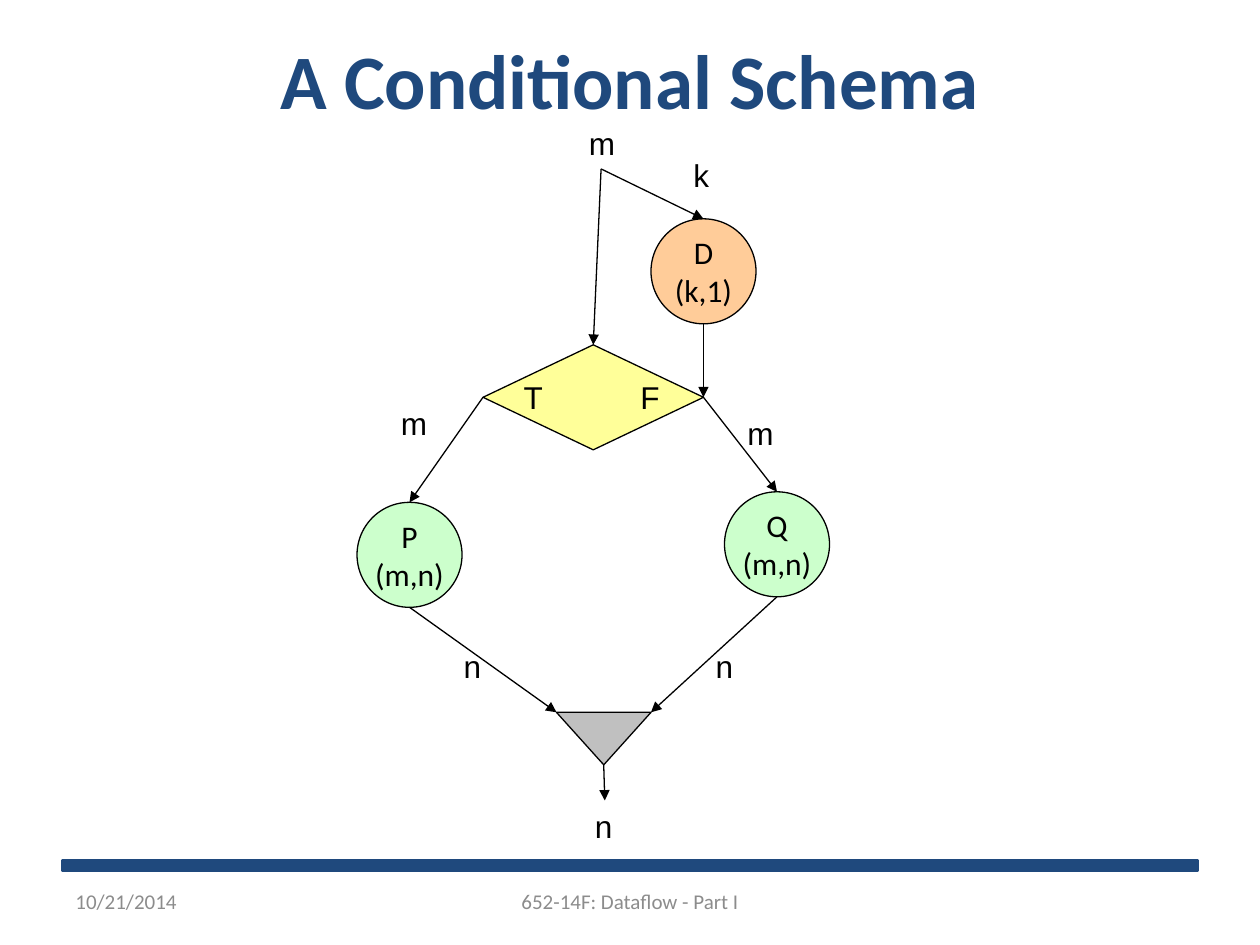
import pptx
import pptx.util
import pptx.dml.color
import pptx.enum.shapes
import pptx.enum.text
import pptx.oxml

Inches, Pt = pptx.util.Inches, pptx.util.Pt
SHAPE = pptx.enum.shapes.MSO_SHAPE
ALIGN = pptx.enum.text.PP_ALIGN

COLORS = {"navy": "1F497D", "black": "000000", "footer": "8C8C8C", "orange": "FFCC99",
          "yellow": "FFFF99", "green": "CCFFCC", "gray": "C0C0C0"}
RGB = {name: pptx.dml.color.RGBColor.from_string(value) for name, value in COLORS.items()}

# Diagram grid: twelve cells to the inch, rows start slightly below the top edge
COL = [Inches(n / 12) for n in range(121)]
ROW = [Inches(0.07 + n / 12) for n in range(90)]
CELL = Inches(1 / 12)


def write(frame, text, size=18, font="Calibri", color="black", bold=False,
          align=ALIGN.CENTER, wrap=False):
    frame.text = text
    frame.word_wrap = wrap
    frame.vertical_anchor = pptx.enum.text.MSO_ANCHOR.MIDDLE
    for paragraph in frame.paragraphs:
        paragraph.alignment = align
        paragraph.font.size = Pt(size)
        paragraph.font.name = font
        paragraph.font.bold = bold
        paragraph.font.color.rgb = RGB[color]


def add_block(kind, left, top, width, height, fill, line="black", weight=0.75):
    block = slide.shapes.add_shape(kind, left, top, width, height)
    block.shadow.inherit = False
    block.fill.solid()
    block.fill.fore_color.rgb = RGB[fill]
    block.line.color.rgb = RGB[line]
    block.line.width = Pt(weight)
    return block


deck = pptx.Presentation()
deck.slide_width, deck.slide_height = Inches(10), Inches(7.5)
slide = deck.slides.add_slide(deck.slide_layouts[5])

# Footer rule
add_block(SHAPE.RECTANGLE, COL[6], Inches(6.83), COL[108], Inches(0.08), "navy", "navy", 2)

# Title
title = slide.shapes.title
title.left, title.top, title.width, title.height = 0, 0, deck.slide_width, COL[15]
write(title.text_frame, "A Conditional Schema", size=44, color="navy", bold=True, wrap=True)

# Operators: text, column, row, fill
for operator, col, row, fill in [("D\n(k,1)", 62, 20, "orange"),
                                 ("P\n(m,n)", 34, 47, "green"),
                                 ("Q\n(m,n)", 69, 46, "green")]:
    circle = add_block(SHAPE.OVAL, COL[col], ROW[row], 10 * CELL, 10 * CELL, fill)
    write(circle.text_frame, operator)

# Decision and merge
add_block(SHAPE.FLOWCHART_DECISION, COL[46], ROW[32], 21 * CELL, 10 * CELL, "yellow")
merge = add_block(SHAPE.ISOSCELES_TRIANGLE, COL[53], ROW[67], 9 * CELL, 5 * CELL, "gray")
merge.rotation = 180

# Arrows: start column and row, end column and row
for start_col, start_row, end_col, end_row in [
        (57.25, 15.25, 56.5, 32), (57.25, 15.25, 67, 20), (67, 30, 67, 37),
        (46, 37, 39, 47), (67, 37, 74, 46), (39, 57, 53, 67),
        (74, 56, 62, 67), (57.5, 72, 57.6, 75.4)]:
    arrow = slide.shapes.add_connector(
        pptx.enum.shapes.MSO_CONNECTOR.STRAIGHT,
        int(start_col * CELL), int(ROW[0] + start_row * CELL),
        int(end_col * CELL), int(ROW[0] + end_row * CELL))
    arrow.line.color.rgb = RGB["black"]
    arrow.line.width = Pt(0.75)
    head = pptx.oxml.parse_xml(
        '<a:tailEnd xmlns:a="http://schemas.openxmlformats.org/drawingml/2006/main" '
        'type="triangle"/>')
    arrow.line._get_or_add_ln().append(head)
    arrow._element.spPr.append(pptx.oxml.parse_xml(
        '<a:effectLst xmlns:a="http://schemas.openxmlformats.org/drawingml/2006/main"/>'))

# Labels: text, centre column and row
label_width, label_height = Inches(0.4), Inches(0.4)
for label, col, row in [("T", 50.8, 37), ("F", 61.9, 37), ("m", 57.3, 12.8),
                        ("m", 39.4, 39.4), ("m", 72.4, 40.4), ("n", 69, 62.6),
                        ("n", 45, 62.6), ("n", 57.5, 77.8), ("k", 66.8, 15.8)]:
    box = slide.shapes.add_textbox(int(col * CELL - label_width / 2),
                                   int(ROW[0] + row * CELL - label_height / 2),
                                   label_width, label_height)
    write(box.text_frame, label, font="Arial")

# Footer and date
for note, left, width, align in [("652-14F: Dataflow - Part I", COL[41], COL[38], ALIGN.CENTER),
                                 ("10/21/2014", COL[6], COL[28], ALIGN.LEFT)]:
    box = slide.shapes.add_textbox(left, Inches(6.95), width, Inches(0.4))
    write(box.text_frame, note, size=12, color="footer", align=align, wrap=True)

deck.save("out.pptx")
